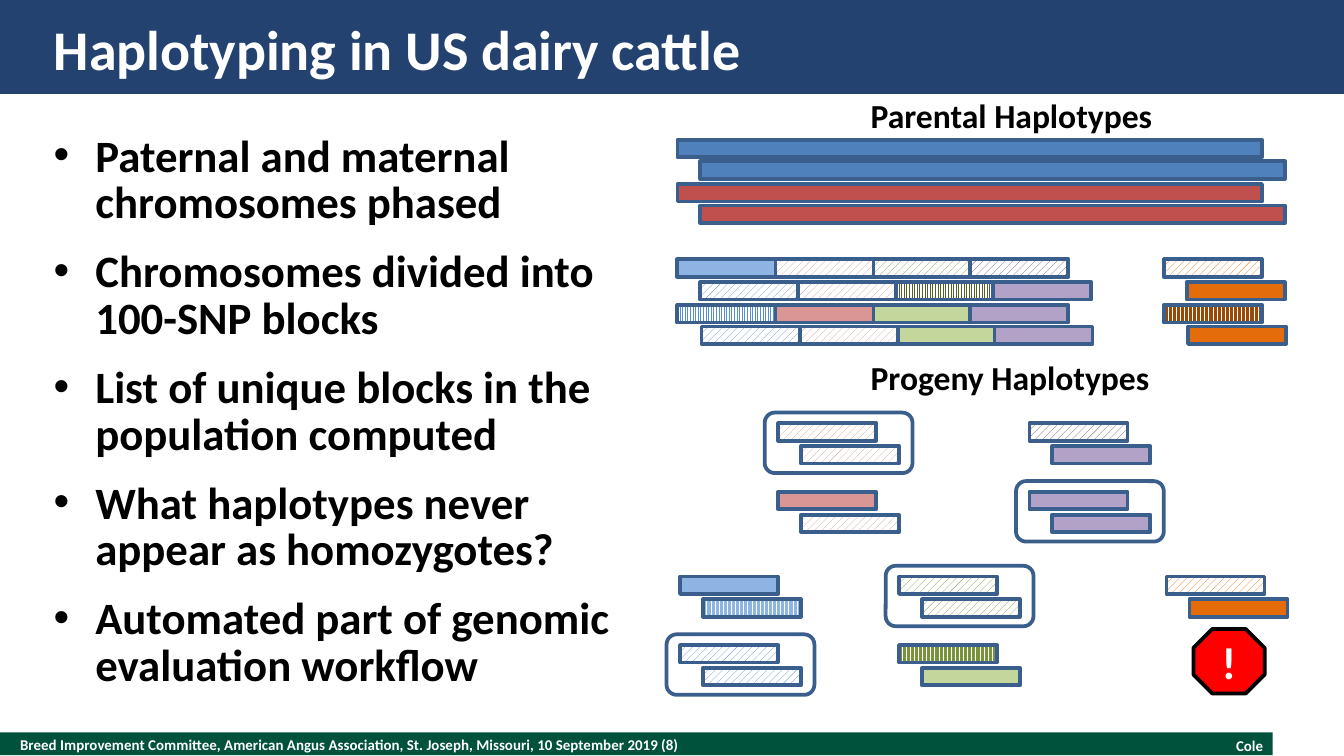
from dataclasses import dataclass

from lxml import etree
from pptx import Presentation
from pptx.dml.color import RGBColor
from pptx.enum.dml import MSO_PATTERN_TYPE
from pptx.enum.shapes import MSO_SHAPE
from pptx.enum.text import MSO_ANCHOR, MSO_AUTO_SIZE, PP_ALIGN
from pptx.oxml.ns import qn
from pptx.util import Pt

EMU_PER_PX = 9144  # 100 px to the inch
RECT, ROUNDED, OCTAGON = MSO_SHAPE.RECTANGLE, MSO_SHAPE.ROUNDED_RECTANGLE, MSO_SHAPE.OCTAGON
DIAGONAL = MSO_PATTERN_TYPE.WIDE_UPWARD_DIAGONAL
LIGHT_VERT = MSO_PATTERN_TYPE.LIGHT_VERTICAL
DARK_VERT = MSO_PATTERN_TYPE.DARK_VERTICAL
LEFT, CENTER, RIGHT = PP_ALIGN.LEFT, PP_ALIGN.CENTER, PP_ALIGN.RIGHT
TOP, MIDDLE = MSO_ANCHOR.TOP, MSO_ANCHOR.MIDDLE


@dataclass(frozen=True)
class Theme:
    font: str = "Calibri"
    title_size: int = 30
    body_size: int = 24
    label_size: int = 18
    footer_size: int = 8
    white: str = "FFFFFF"
    black: str = "000000"
    header: str = "244270"
    footer: str = "00523C"
    outline: str = "3A5F8C"
    paternal: str = "4F81BD"
    maternal: str = "C0504D"
    alert: str = "FF0000"
    light_blue: str = "8EB4E3"
    blue: str = "558ED5"
    pink: str = "D99694"
    green: str = "77933C"
    dark_green: str = "4F6228"
    light_green: str = "C3D69B"
    purple: str = "604A7B"
    light_purple: str = "B3A2C7"
    orange: str = "E46C0A"
    brown: str = "984807"


def px(length):
    return round(length * EMU_PER_PX)


def write(frame, text, *, size, color, font, align=LEFT, anchor=TOP, inset=0,
          wrap=True, bullets=False):
    """Fill a text frame, one paragraph for each line of text."""
    frame.auto_size = MSO_AUTO_SIZE.NONE
    frame.word_wrap = wrap
    frame.vertical_anchor = anchor
    frame.margin_left = frame.margin_right = px(inset)
    frame.margin_top = frame.margin_bottom = px(inset / 2)
    frame.text = text
    for paragraph in frame.paragraphs:
        if bullets:
            properties = paragraph._p.get_or_add_pPr()
            properties.set("marL", str(px(31)))
            properties.set("indent", str(px(-31)))
            etree.SubElement(properties, qn("a:buFont"), typeface="Arial")
            etree.SubElement(properties, qn("a:buChar"), char="•")
            paragraph.line_spacing = Pt(25)
            paragraph.space_after = Pt(12)
        paragraph.alignment = align
        paragraph.font.name = font
        paragraph.font.size = Pt(size)
        paragraph.font.bold = True
        paragraph.font.color.rgb = RGBColor.from_string(color)


class Deck:
    BLOCK_WIDTH, BAR_HEIGHT = 73, 13

    def __init__(self, theme, width):
        self.theme = theme
        self.presentation = Presentation()
        self.presentation.slide_width = px(width)
        self.presentation.slide_height = px(width * 9 / 16)
        self.slide = self.presentation.slides.add_slide(self.presentation.slide_layouts[5])

    def title(self, text, left, top, width, height):
        heading = self.slide.shapes.title
        # Bring the placeholder in front of the header band
        self.slide.shapes._spTree.append(heading._element)
        heading.left, heading.top = px(left), px(top)
        heading.width, heading.height = px(width), px(height)
        write(heading.text_frame, text, size=self.theme.title_size,
              color=self.theme.white, font=self.theme.font, anchor=MIDDLE)

    def text(self, text, left, top, width, height, **style):
        box = self.slide.shapes.add_textbox(px(left), px(top), px(width), px(height))
        write(box.text_frame, text, font=self.theme.font, **style)

    def shape(self, kind, left, top, width, height, fill=None, line=None):
        """fill is None, a colour, or a (pattern, colour) pair."""
        shape = self.slide.shapes.add_shape(kind, px(left), px(top), px(width), px(height))
        shape.shadow.inherit = False
        if fill is None:
            shape.fill.background()
        elif isinstance(fill, tuple):
            pattern, color = fill
            shape.fill.patterned()
            shape.fill.pattern = pattern
            shape.fill.fore_color.rgb = RGBColor.from_string(color)
            shape.fill.back_color.rgb = RGBColor.from_string(self.theme.white)
        else:
            shape.fill.solid()
            shape.fill.fore_color.rgb = RGBColor.from_string(fill)
        if line:
            shape.line.color.rgb = RGBColor.from_string(line)
            shape.line.width = Pt(2)
        else:
            shape.line.fill.background()
        return shape

    def bar(self, left, top, fill, width=BLOCK_WIDTH):
        self.shape(RECT, left, top, width, self.BAR_HEIGHT, fill, self.theme.outline)

    def genotype(self, left, top, first, second, homozygous=False):
        """Two offset haplotype blocks, framed when they match."""
        self.bar(left, top, first)
        self.bar(left + 17, top + 17, second)
        if homozygous:
            self.shape(ROUNDED, left - 10, top - 8, 110, 45, line=self.theme.outline)


def main():
    theme = Theme()
    deck = Deck(theme, 1000)

    # Header and footer
    deck.shape(RECT, 0, 545, 947, 17, theme.footer)
    deck.shape(RECT, 0, 0, 1000, 70, theme.header)
    deck.title("Haplotyping in US dairy cattle", 40, 10, 920, 52)
    footer_style = dict(size=theme.footer_size, color=theme.white, anchor=MIDDLE)
    deck.text("Breed Improvement Committee, American Angus Association, "
              "St. Joseph, Missouri, 10 September 2019 (8)", 15, 546, 650, 16, **footer_style)
    deck.text("Cole", 720, 548, 220, 13, align=RIGHT, **footer_style)

    # Key points
    points = [
        "Paternal and maternal chromosomes phased",
        "Chromosomes divided into 100-SNP blocks",
        "List of unique blocks in the population computed",
        "What haplotypes never appear as homozygotes?",
        "Automated part of genomic evaluation workflow",
    ]
    deck.text("\n".join(points), 40, 100, 440, 420, size=theme.body_size,
              color=theme.black, bullets=True)

    # Section labels
    for label, top in (("Parental Haplotypes", 66), ("Progeny Haplotypes", 261)):
        deck.text(label, 638, top, 230, 40, size=theme.label_size,
                  color=theme.black, inset=10, wrap=False)

    # Whole parental chromosomes
    chromosomes = (theme.paternal, theme.paternal, theme.maternal, theme.maternal)
    for row, color in enumerate(chromosomes):
        deck.bar(504 + 17 * (row % 2), 104 + round(16.4 * row), color, width=435)

    # Chromosomes cut into blocks, the last one after a gap
    blue, pink = (DIAGONAL, theme.blue), (DIAGONAL, theme.pink)
    green, purple = (DIAGONAL, theme.green), (DIAGONAL, theme.purple)
    orange = (DIAGONAL, theme.orange)
    block_offsets = (0, 73, 146, 218, 362)
    block_rows = (
        (504, (theme.light_blue, pink, green, purple, orange)),
        (521, (blue, pink, (LIGHT_VERT, theme.dark_green), theme.light_purple, theme.orange)),
        (504, ((LIGHT_VERT, theme.blue), theme.pink, theme.light_green, theme.light_purple,
               (DARK_VERT, theme.brown))),
        (522, (blue, pink, theme.light_green, theme.light_purple, theme.orange)),
    )
    for row, (left, fills) in enumerate(block_rows):
        for offset, fill in zip(block_offsets, fills):
            deck.bar(left + offset, 193 + round(16.8 * row), fill)

    # Progeny genotypes
    genotypes = (
        (506, 429, theme.light_blue, (DARK_VERT, theme.light_blue), False),
        (506, 480, blue, blue, True),
        (669, 429, green, green, True),
        (669, 480, (DARK_VERT, theme.green), theme.light_green, False),
        (579, 315, pink, pink, True),
        (579, 366, theme.pink, pink, False),
        (766, 315, purple, theme.light_purple, False),
        (766, 366, theme.light_purple, theme.light_purple, True),
        (868, 429, orange, theme.orange, False),
    )
    for genotype in genotypes:
        deck.genotype(*genotype)

    # Warning: no homozygote seen
    warning = deck.shape(OCTAGON, 888, 468, 53, 48, theme.alert, theme.black)
    write(warning.text_frame, "!", size=theme.body_size, color=theme.white,
          font=theme.font, align=CENTER, anchor=MIDDLE, inset=10)

    deck.presentation.save("out.pptx")


if __name__ == "__main__":
    main()
